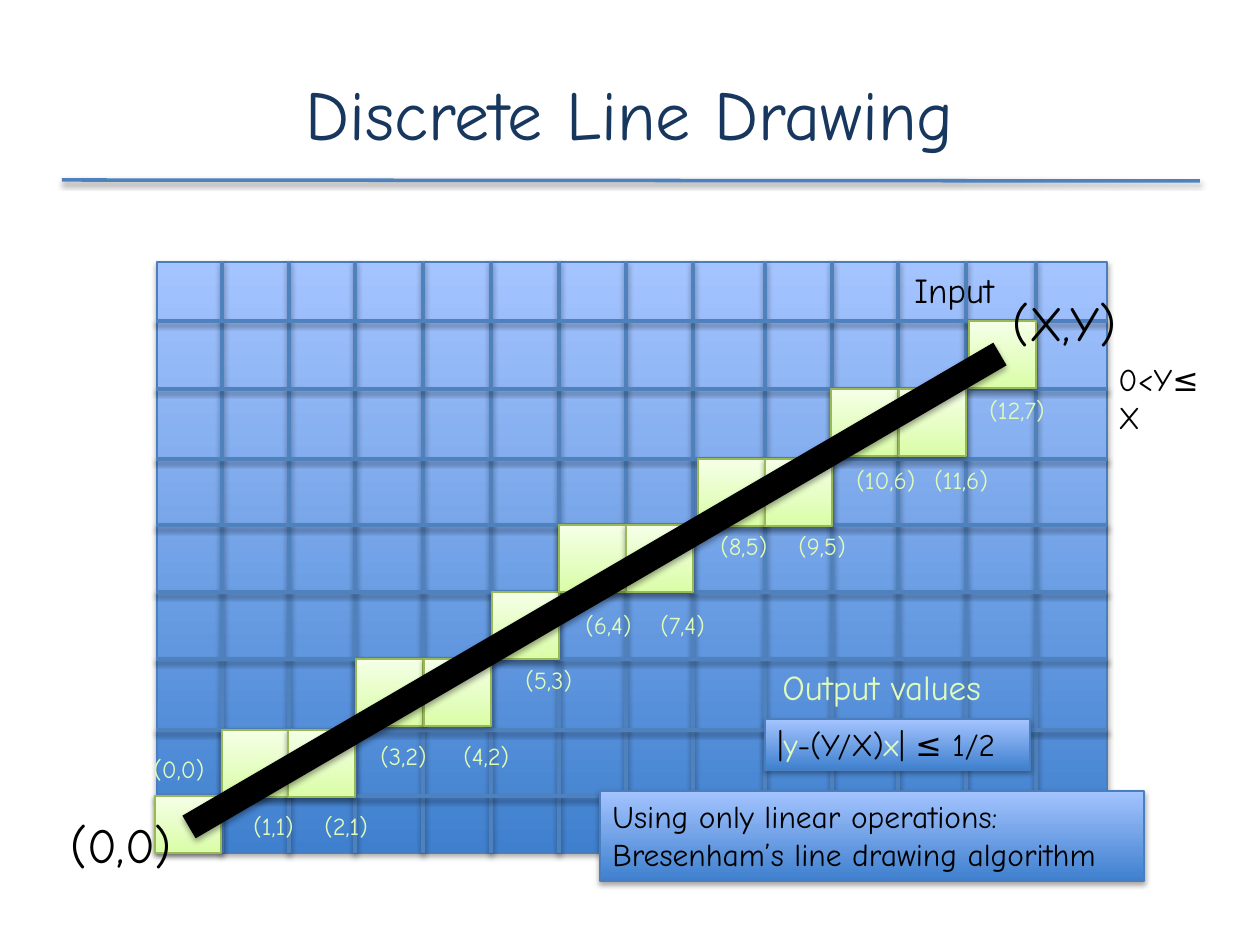
"""Build the slide on discrete line drawing with a pixel grid and its labels."""
from lxml import etree
from pptx import Presentation
from pptx import util as u
from pptx.dml.color import RGBColor
from pptx.enum import shapes, text
from pptx.oxml.ns import qn

FONT = "Comic Neue"
COLORS = {
    "title": "17375E", "rule": "4F81BD", "ink": "000000", "output": "E0FBB9",
    "blue_low": "3F80CE", "blue_high": "A4C4FF", "blue_edge": "4B7EBC",
    "green_low": "DAFDA7", "green_high": "F5FFE7", "green_edge": "98B955",
}
TITLE = ("Discrete Line Drawing", (63, 45, 1134, 135))
GRID = (157, 262, 950, 591)
COLUMN_LINES = [222, 289, 355, 423, 491, 559, 626, 693, 765, 832, 898, 966, 1036]
ROW_LINES = [796, 730, 659, 592, 525, 459, 389, 321]
CELL = 67
FIRST_CELL = (155, 796, 66, 57)
END_X, END_Y = 12, 7
LABEL_PLACES = [
    (141, 748, 81), (241, 805, 73), (312, 805, 77), (368, 735, 81), (451, 735, 81),
    (513, 659, 81), (573, 604, 81), (648, 604, 81), (708, 525, 81), (786, 525, 81),
    (844, 459, 92), (922, 459, 88), (977, 389, 92),
]
NOTES = [
    ("(0,0)", 28, "ink", (58, 808, 136, 72), False),
    ("(X,Y)", 28, "ink", (1000, 286, 142, 72), False),
    ("Output values", 20, "output", (770, 659, 253, 55), False),
    ("Input", 20, "ink", (902, 262, 117, 55), False),
    ("0<Y≤X", 18, "ink", (1106, 354, 112, 51), True),
]
FORMULA = [[("|", "ink"), ("y", "output"), ("-(Y/X)", "ink"), ("x", "output"), ("| ≤ 1/2", "ink")]]
FORMULA_BOX = (765, 719, 265, 51)
ALGORITHM = [
    [("Using only linear operations:", "ink")],
    [("Bresenham’s line drawing algorithm", "ink")],
]
ALGORITHM_BOX = (600, 791, 544, 90)


def px(*lengths):
    return [u.Emu(round(length * 914400 / 126)) for length in lengths]


def rgb(name):
    return RGBColor.from_string(COLORS[name])


def add_shadow(shape, opacity=38):
    properties = shape._element.spPr
    effects = properties.find(qn("a:effectLst"))
    if effects is None:
        effects = etree.SubElement(properties, qn("a:effectLst"))
    shadow = etree.SubElement(effects, qn("a:outerShdw"), blurRad="40000", dist="20000",
                              dir="5400000", rotWithShape="0")
    color = etree.SubElement(shadow, qn("a:srgbClr"), val=COLORS["ink"])
    etree.SubElement(color, qn("a:alpha"), val=str(opacity * 1000))


def add_line(slide, ends, color="rule", width=2):
    line = slide.shapes.add_connector(shapes.MSO_CONNECTOR.STRAIGHT, *px(*ends))
    line.line.color.rgb = rgb(color)
    line.line.width = u.Pt(width)
    add_shadow(line)


def add_box(slide, box, hue, opacity):
    shape = slide.shapes.add_shape(shapes.MSO_SHAPE.RECTANGLE, *px(*box))
    shape.shadow.inherit = False
    shape.fill.gradient()
    shape.fill.gradient_angle = 90
    for stop, end in zip(shape.fill.gradient_stops, ("low", "high")):
        stop.color.rgb = rgb(f"{hue}_{end}")
    shape.line.color.rgb = rgb(f"{hue}_edge")
    shape.line.width = u.Pt(0.75)
    add_shadow(shape, opacity)
    return shape


def write(shape, paragraphs, size, wrap=False):
    frame = shape.text_frame
    frame.word_wrap = wrap
    frame.auto_size = text.MSO_AUTO_SIZE.SHAPE_TO_FIT_TEXT
    frame.vertical_anchor = text.MSO_ANCHOR.TOP
    for index, runs in enumerate(paragraphs):
        paragraph = frame.add_paragraph() if index else frame.paragraphs[0]
        paragraph.alignment = text.PP_ALIGN.LEFT
        for words, color in runs:
            run = paragraph.add_run()
            run.text = words
            style(run, size, color)


def style(run, size, color):
    run.font.name = FONT
    run.font.size = u.Pt(size)
    run.font.color.rgb = rgb(color)


def add_note(slide, words, size, color, box, wrap=False):
    write(slide.shapes.add_textbox(*px(*box)), [[(words, color)]], size, wrap)


def add_title(slide):
    words, box = TITLE
    title = slide.shapes.title
    title.left, title.top, title.width, title.height = px(*box)
    title.text_frame.text = words
    title.text_frame.vertical_anchor = text.MSO_ANCHOR.MIDDLE
    paragraph = title.text_frame.paragraphs[0]
    paragraph.alignment = text.PP_ALIGN.CENTER
    style(paragraph.runs[0], 40, "title")
    add_line(slide, (62, 180, 1200, 181))


def add_grid(slide, pixels):
    left, top, width, height = GRID
    add_box(slide, GRID, "blue", 35)
    for x in COLUMN_LINES:
        add_line(slide, (x, top - 1, x, top + height))
    for y in ROW_LINES:
        add_line(slide, (left - 1, y, left + width, y))
    for x, y in pixels:
        box = (COLUMN_LINES[x] - CELL, ROW_LINES[y], CELL, CELL) if x else FIRST_CELL
        add_box(slide, box, "green", 38)
    add_line(slide, (189, 827, 1000, 354), "ink", 15)


def main():
    presentation = Presentation()
    presentation.slide_width, presentation.slide_height = px(1260, 945)
    slide = presentation.slides.add_slide(presentation.slide_layouts[5])
    pixels = [(x, round(x * END_Y / END_X)) for x in range(END_X + 1)]
    add_title(slide)
    add_grid(slide, pixels)
    for words, size, color, box, wrap in NOTES:
        add_note(slide, words, size, color, box, wrap)
    write(add_box(slide, FORMULA_BOX, "blue", 35), FORMULA, 18)
    for (x, y), (left, top, width) in zip(pixels, LABEL_PLACES):
        add_note(slide, f"({x},{y})", 14, "output", (left, top, width, 43))
    write(add_box(slide, ALGORITHM_BOX, "blue", 35), ALGORITHM, 18)
    presentation.save("out.pptx")


if __name__ == "__main__":
    main()
